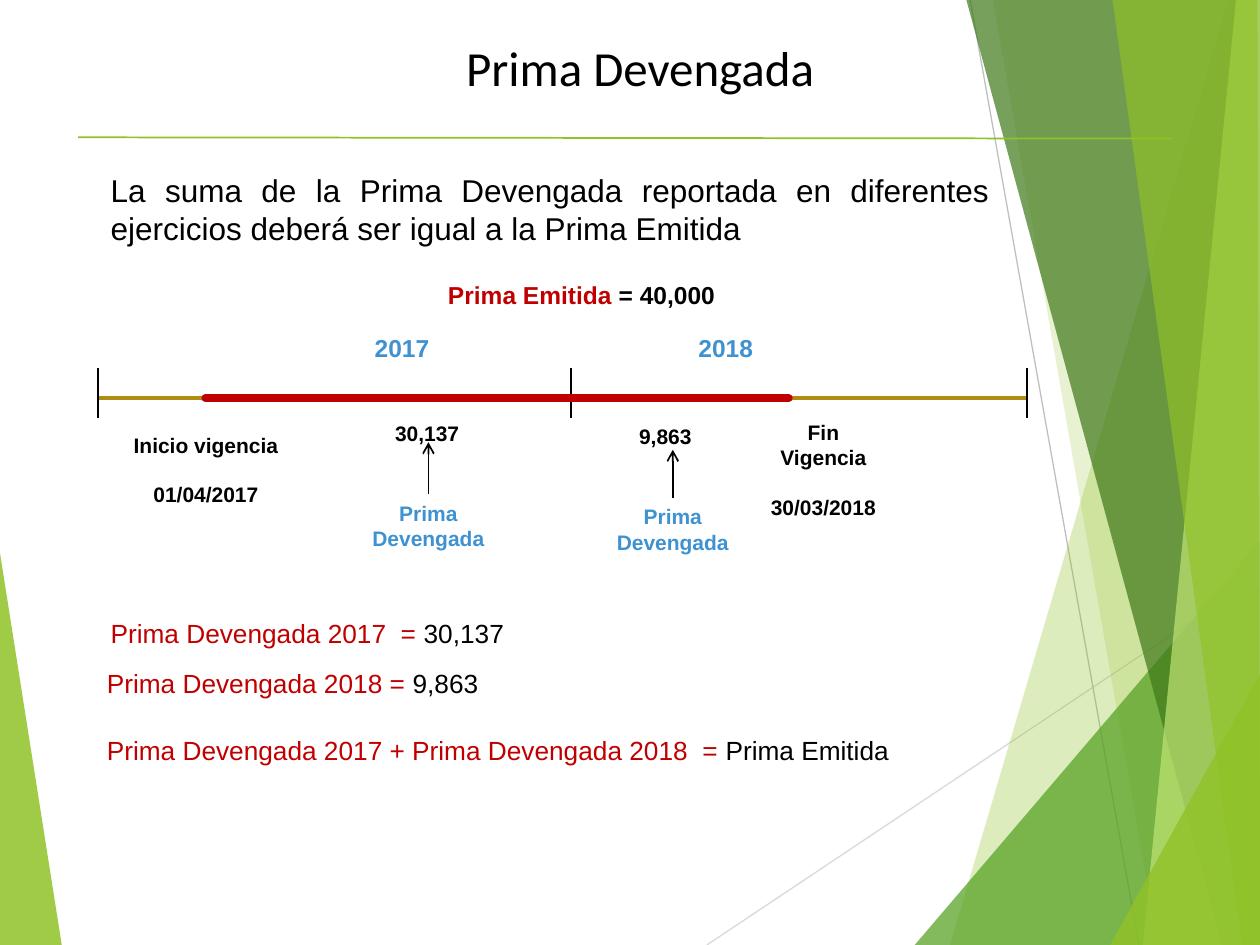
from dataclasses import dataclass
from lxml import etree
from pptx import Presentation
from pptx.dml.color import RGBColor
from pptx.enum.shapes import MSO_CONNECTOR
from pptx.enum.text import MSO_AUTO_SIZE, PP_ALIGN
from pptx.oxml.ns import qn
from pptx.util import Pt

PX = 9144
LINE = MSO_CONNECTOR.STRAIGHT
GROW = MSO_AUTO_SIZE.SHAPE_TO_FIT_TEXT
MID = PP_ALIGN.CENTER
FULL = PP_ALIGN.JUSTIFY


@dataclass(frozen=True)
class Theme:
    ink: str = "000000"
    red: str = "C00000"
    blue: str = "3F92D1"
    gold: str = "AF8C14"
    lime: str = "90C226"
    green: str = "54A021"
    dark: str = "3F7819"
    pale: str = "C0E474"
    gray: str = "BFBFBF"
    mist: str = "D9D9D9"
    head: int = 28
    lead: int = 18
    sums: int = 15
    year: int = 14
    note: int = 12
    sans: str = "Arial"
    title: str = "Calibri"


T = Theme()


@dataclass(frozen=True)
class Box:
    x: int
    y: int
    w: int
    h: int

    def sub(self, x, y, w, h):
        return Box(self.x + x, self.y + y, w, h)

    def emu(self):
        return [v * PX for v in (self.x, self.y, self.w, self.h)]


def style(font, color, form):
    for key, val in form.items():
        setattr(font, key, val)
    font.color.rgb = RGBColor.from_string(color)


def text(slide, box, rows, size, align=MID, bold=False, face=T.sans, gaps=()):
    shape = slide.shapes.add_textbox(*box.emu())
    frame = shape.text_frame
    for key, val in {"word_wrap": True, "auto_size": GROW}.items():
        setattr(frame, key, val)
    form = {"name": face, "size": Pt(size), "bold": bold}
    for i, row in enumerate(rows):
        para = frame.add_paragraph() if i else frame.paragraphs[0]
        para.alignment = align
        if i in gaps:
            para.space_before = Pt(size * 1.15)
        for words, color in row:
            run = para.add_run()
            run.text = words
            style(run.font, color, form)
    return shape


def line(slide, box, ends, color, width, cap=None, arrow=False, start=None):
    x1, y1, x2, y2 = ends
    spots = (box.x + x1, box.y + y1, box.x + x2, box.y + y2)
    wire = slide.shapes.add_connector(LINE, *[v * PX for v in spots])
    if start is not None:
        wire.begin_connect(start, 0)
    wire.line.color.rgb = RGBColor.from_string(color)
    wire.line.width = Pt(width)
    props = wire.line._get_or_add_ln()
    if cap:
        props.set("cap", cap)
    if arrow:
        etree.SubElement(props, qn("a:tailEnd"), type="arrow")
    etree.SubElement(wire._element.spPr, qn("a:effectLst"))


def facet(slide, box, points, color, alpha):
    spots = [((box.x + x) * PX, (box.y + y) * PX) for x, y in points]
    pen = slide.shapes.build_freeform(*spots[0])
    pen.add_line_segments(spots[1:], close=True)
    shape = pen.convert_to_shape()
    shape.shadow.inherit = False
    shape.fill.solid()
    shape.fill.fore_color.rgb = RGBColor.from_string(color)
    shape.line.fill.background()
    tint = shape._element.spPr.find(".//" + qn("a:srgbClr"))
    etree.SubElement(tint, qn("a:alpha"), val=str(alpha * 1000))


def decor(slide, box):
    w, h = box.w, box.h
    facet(slide, box, [(0, 439), (49, h), (0, h)], T.lime, 85)
    line(slide, box, (561, h, w, 457), T.mist, 0.75)
    line(slide, box, (770, 0, 904, h), T.gray, 0.75)
    for top, foot, color, alpha in (
        (975, 754, T.lime, 30),
        (788, 919, T.lime, 20),
        (None, 726, T.green, 72),
        (767, 970, T.dark, 70),
        (981, 907, T.pale, 70),
        (883, 986, T.lime, 65),
        (None, 881, T.lime, 80),
    ):
        if top is None:
            rise = 429 if color == T.green else 535
            points = [(foot, h), (w, rise), (w, h)]
        else:
            edge = 998 if top == 883 else w
            points = [(top, 0), (foot, h), (w, h), (edge, 0)]
        facet(slide, box, points, color, alpha)


def header(slide, box):
    text(slide, box.sub(79, 0, 734, 57), [[("Prima Devengada", T.ink)]],
         T.head, face=T.title)
    line(slide, box, (0, 84, box.w, 85), T.lime, 1)


def intro(slide, box):
    words = ("La suma de la Prima Devengada reportada en diferentes "
             "ejercicios deberá ser igual a la Prima Emitida")
    text(slide, box, [[(words, T.ink)]], T.lead, FULL)


def period(slide, box):
    axis = 99
    text(slide, box.sub(249, 0, 269, 34),
         [[("Prima Emitida ", T.red), ("= 40,000", T.ink)]], T.year, bold=True)
    line(slide, box, (0, axis, box.w, axis), T.gold, 2)
    for x in (0, 375, box.w):
        line(slide, box, (x, 75, x, 115), T.ink, 1)
    for x, year in ((190, "2017"), (447, "2018")):
        text(slide, box.sub(x, 42, 102, 34), [[(year, T.blue)]],
             T.year, bold=True)
    line(slide, box, (85, axis, 548, axis), T.red, 4.5, cap="rnd")
    for spot, rows in (
        ((9, 121, 153, 71), ("Inicio vigencia", "01/04/2017")),
        ((517, 111, 117, 91), ("Fin", "Vigencia", "30/03/2018")),
    ):
        text(slide, box.sub(*spot), [[(row, T.ink)] for row in rows],
             T.note, bold=True, gaps=(len(rows) - 1,))
    for x, y, value, left, top, wide, tip in (
        (210, 112, "30,137", 198, 175, 128, 134),
        (399, 114, "9,863", 396, 178, 120, 140),
    ):
        text(slide, box.sub(x, y, 102, 30), [[(value, T.ink)]],
             T.note, bold=True)
        label = text(slide, box.sub(left, top, wide, 50),
                     [[("Prima Devengada", T.blue)]], T.note, bold=True)
        mid = left + wide // 2
        line(slide, box, (mid, top, mid, tip), T.ink, 1,
             arrow=True, start=label)


def sums(slide, box):
    for x, y, term, value in (
        (3, 0, "Prima Devengada 2017  = ", "30,137"),
        (0, 40, "Prima Devengada 2018 = ", "9,863"),
        (0, 93, "Prima Devengada 2017 + Prima Devengada 2018  = ",
         "Prima Emitida"),
    ):
        text(slide, box.sub(x, y, box.w, 35),
             [[(term, T.red), (value, T.ink)]], T.sums, FULL)


def main():
    deck = Presentation()
    deck.slide_width, deck.slide_height = 1000 * PX, 750 * PX
    slide = deck.slides.add_slide(deck.slide_layouts[6])
    decor(slide, Box(0, 0, 1000, 750))
    header(slide, Box(62, 25, 868, 85))
    intro(slide, Box(78, 131, 717, 71))
    period(slide, Box(78, 217, 737, 228))
    sums(slide, Box(75, 485, 717, 128))
    deck.save("out.pptx")


if __name__ == "__main__":
    main()
